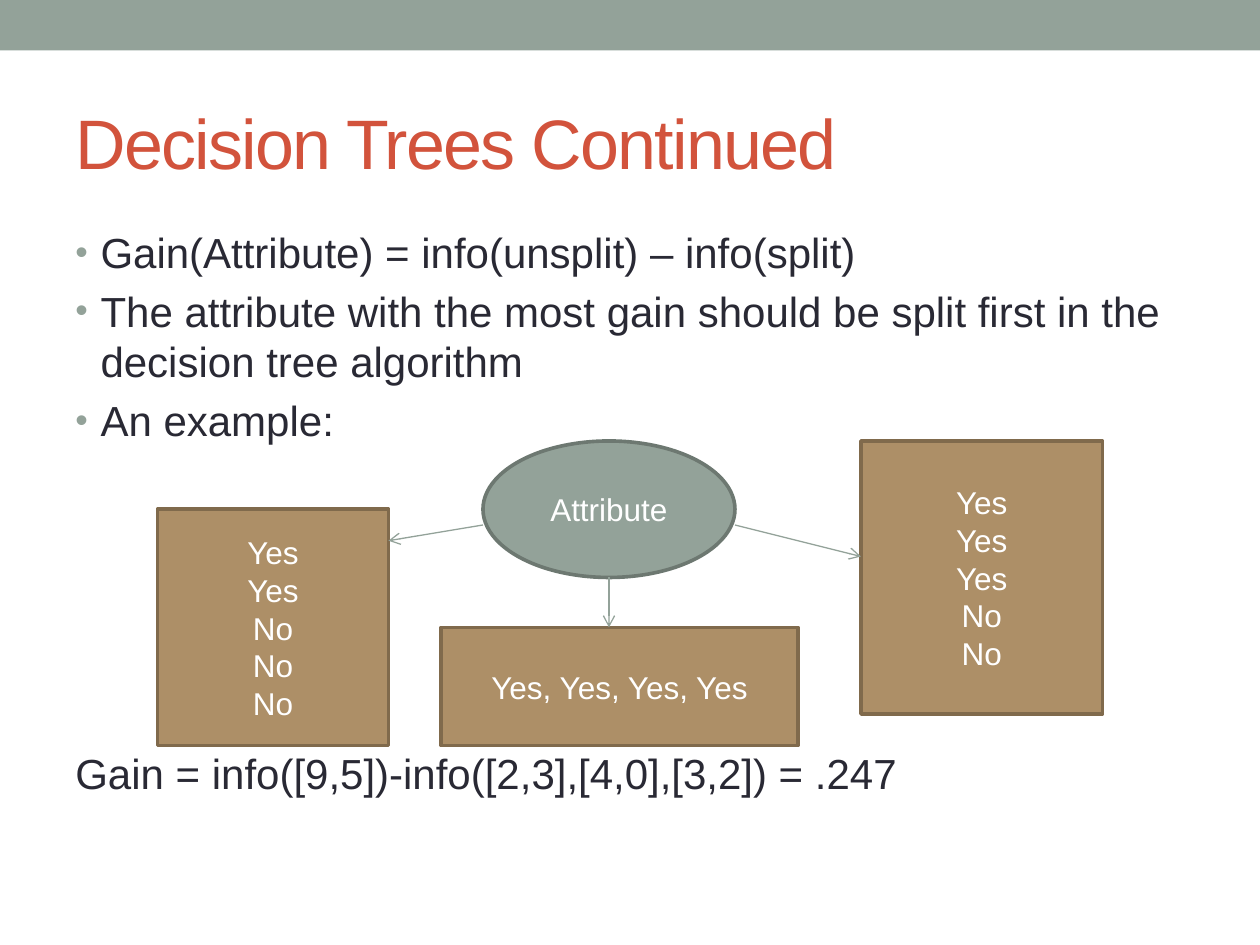
"""Build the slide on information gain in decision trees."""
from lxml import etree
from pptx import Presentation
from pptx import util as u
from pptx.dml.color import RGBColor
from pptx.enum import shapes, text
from pptx.oxml.ns import qn

COLORS = {"sage": "93A299", "sage_edge": "6D7871", "tan": "AD8F67",
          "tan_edge": "806A4C", "title": "D2533C", "body": "292934", "white": "FFFFFF"}
COLORS = {name: RGBColor.from_string(value) for name, value in COLORS.items()}

presentation = Presentation()
presentation.slide_width, presentation.slide_height = u.Inches(10), u.Inches(7.5)
COLUMN = presentation.slide_width / 120
ROW = presentation.slide_height / 90
slide = presentation.slides.add_slide(presentation.slide_layouts[5])


def grid(left, top, width, height):
    return [round(n * unit) for n, unit in zip((left, top, width, height), (COLUMN, ROW) * 2)]


def write(frame, lines, size, color, alignment):
    frame.word_wrap = True
    frame.text = "\n".join(lines)
    for paragraph in frame.paragraphs:
        paragraph.alignment = alignment
        paragraph.font.name = "Arial"
        paragraph.font.size = u.Pt(size)
        paragraph.font.color.rgb = COLORS[color]


band = slide.shapes.add_shape(shapes.MSO_SHAPE.RECTANGLE, *grid(0, 0, 120, 4.8))
band.shadow.inherit = False
band.fill.solid()
band.fill.fore_color.rgb = COLORS["sage"]
band.line.fill.background()

title = slide.shapes.title
title.left, title.top, title.width, title.height = grid(6, 7, 108, 13)
write(title.text_frame, ["Decision Trees Continued"], 40, "title", text.PP_ALIGN.LEFT)
title.text_frame.vertical_anchor = text.MSO_ANCHOR.MIDDLE
title.text_frame.paragraphs[0].runs[0].font._element.set("spc", "-100")

points = ["Gain(Attribute) = info(unsplit) – info(split)",
          "The attribute with the most gain should be split first in the decision tree algorithm",
          "An example:"]
result = ["Gain = info([9,5])-info([2,3],[4,0],[3,2]) = .247"]
for lines, top, height, bulleted in [(points, 21, 21, True), (result, 70.6, 7, False)]:
    frame = slide.shapes.add_textbox(*grid(6, top, 108, height)).text_frame
    write(frame, lines, 24, "body", text.PP_ALIGN.LEFT)
    for paragraph in frame.paragraphs:
        paragraph.space_before = u.Pt(4.8)
        if not bulleted:
            continue
        properties = paragraph._p.get_or_add_pPr()
        properties.set("marL", str(u.Inches(0.2)))
        properties.set("indent", str(-u.Inches(0.2)))
        bullet = [etree.Element(qn("a:buClr")),
                  etree.Element(qn("a:buSzPct"), val="85000"),
                  etree.Element(qn("a:buFont"), typeface="Arial"),
                  etree.Element(qn("a:buChar"), char="•")]
        etree.SubElement(bullet[0], qn("a:srgbClr"), val=str(COLORS["sage"]))
        properties.find(qn("a:spcBef")).getparent()[:] = [properties.find(qn("a:spcBef")), *bullet] + [
            child for child in properties if child.tag == qn("a:defRPr")]

OVAL, BOX = shapes.MSO_SHAPE.OVAL, shapes.MSO_SHAPE.RECTANGLE
nodes = [
    (OVAL, "sage", (46, 42, 24, 13), ["Attribute"]),
    (BOX, "tan", (15, 48.5, 22, 22.5), ["Yes"] * 2 + ["No"] * 3),
    (BOX, "tan", (42, 59.75, 34, 11.25), ["Yes, Yes, Yes, Yes"]),
    (BOX, "tan", (82, 42, 23, 26), ["Yes"] * 3 + ["No"] * 2),
]
for kind, color, place, lines in nodes:
    node = slide.shapes.add_shape(kind, *grid(*place))
    node.shadow.inherit = False
    node.fill.solid()
    node.fill.fore_color.rgb = COLORS[color]
    node.line.color.rgb = COLORS[color + "_edge"]
    node.line.width = u.Pt(2.08)
    write(node.text_frame, lines, 18, "white", text.PP_ALIGN.CENTER)
    node.text_frame.vertical_anchor = text.MSO_ANCHOR.MIDDLE

for ends in [(70, 50, 82, 53), (58, 55, 58, 59.75), (46, 50, 37, 51.5)]:
    branch = slide.shapes.add_connector(shapes.MSO_CONNECTOR.STRAIGHT, *grid(*ends))
    branch.line.color.rgb = COLORS["sage"]
    branch.line.width = u.Pt(0.75)
    etree.SubElement(branch.line._get_or_add_ln(), qn("a:tailEnd"), type="arrow")
    etree.SubElement(branch._element.spPr, qn("a:effectLst"))

presentation.save("out.pptx")
